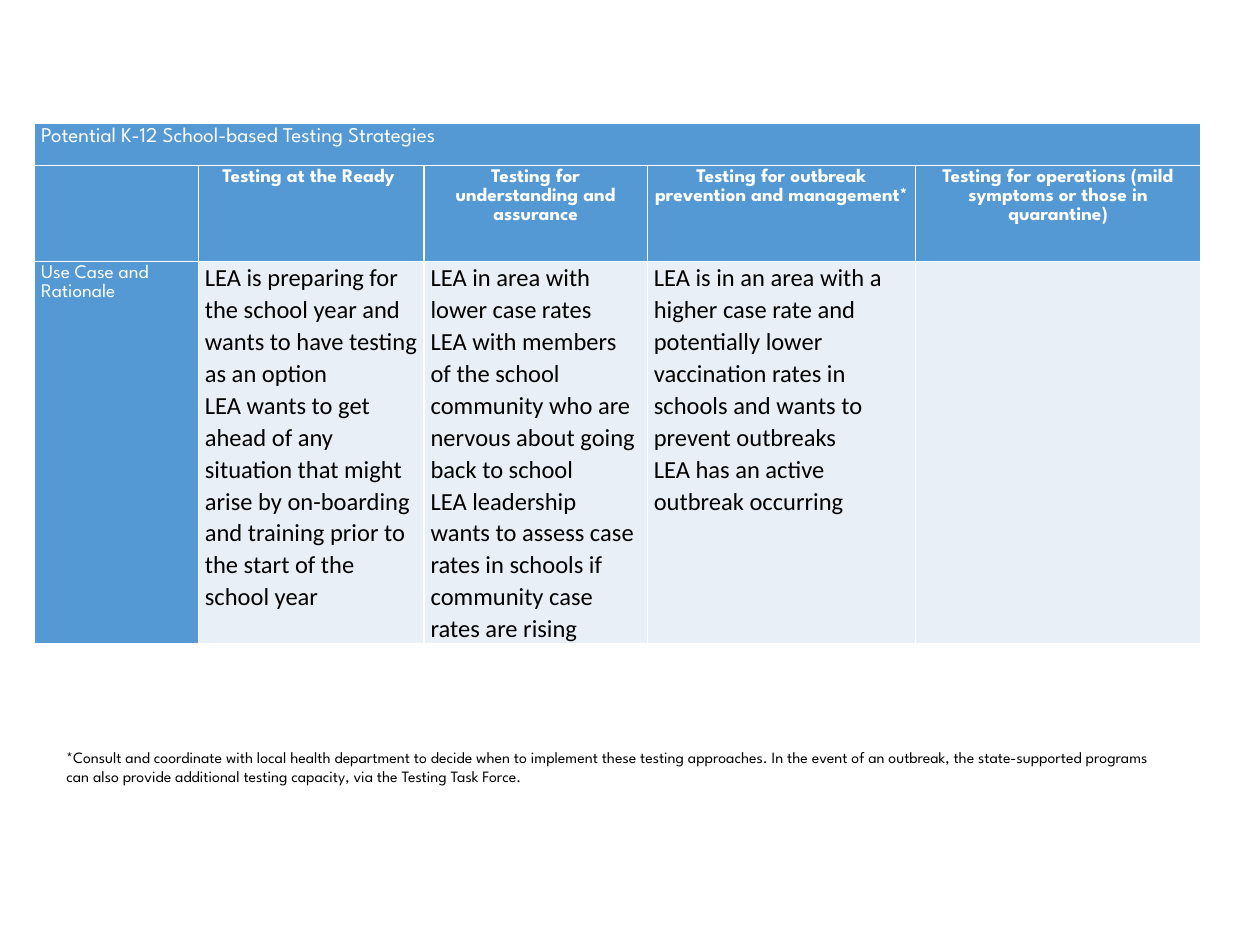
"""Build a slide with a table of school testing strategies and a footnote."""
from dataclasses import dataclass

from lxml import etree
from pptx import Presentation
from pptx.dml.color import RGBColor
from pptx.enum.text import MSO_AUTO_SIZE, PP_ALIGN
from pptx.oxml.ns import qn
from pptx.util import Cm, Pt

LEFT, MID = PP_ALIGN.LEFT, PP_ALIGN.CENTER
GROW = MSO_AUTO_SIZE.SHAPE_TO_FIT_TEXT
BLUE, PALE, WHITE, BLACK = "5499D3", "E9EFF7", "FFFFFF", "000000"
COLS = (3.3, 4.55, 4.5, 5.41, 5.74)
ROWS = (0.85, 1.93, 7.09)


@dataclass(frozen=True)
class Style:
    """Look of a block of text."""
    font: str
    size: int
    color: str
    bold: bool = False
    align: PP_ALIGN = LEFT
    space: float = 1.07
    top: float = 0.05


@dataclass(frozen=True)
class Entry:
    """Content and look of one table cell."""
    lines: tuple[str, ...]
    style: Style
    fill: str = BLUE


TITLE = Style("League Spartan", 12, WHITE)
HEAD = Style("League Spartan", 11, WHITE, True, MID)
SIDE = Style("League Spartan", 11, WHITE)
BODY = Style("Calibri", 14, BLACK, top=0)
NOTE = Style("League Spartan", 9, BLACK, space=1.0)

HEADS = (
    "",
    "Testing at the Ready ",
    "Testing for understanding and assurance",
    "Testing for outbreak prevention and management*",
    "Testing for operations (mild symptoms or those in quarantine)",
)
CASES = (
    ("LEA is preparing for the school year and wants to have testing as an option",
     "LEA wants to get ahead of any situation that might arise by on-boarding "
     "and training prior to the start of the school year"),
    ("LEA in area with lower case rates",
     "LEA with members of the school community who are nervous about going "
     "back to school",
     "LEA leadership wants to assess case rates in schools if community case "
     "rates are rising"),
    ("LEA is in an area with a higher case rate and potentially lower "
     "vaccination rates in schools and wants to prevent outbreaks",
     "LEA has an active outbreak occurring"),
    (),
)
GRID = (
    [Entry(("Potential K-12 School-based Testing Strategies",), TITLE)]
    + [Entry((), TITLE)] * (len(COLS) - 1),
    [Entry((head,) if head else (), HEAD) for head in HEADS],
    [Entry(("Use Case and Rationale",), SIDE)]
    + [Entry(case, BODY, PALE) for case in CASES],
)
FOOT = ("*Consult and coordinate with local health department to decide when to "
        "implement these testing approaches. In the event of an outbreak, the "
        "state-supported programs can also provide additional testing capacity, "
        "via the Testing Task Force.")


def tint(code: str) -> RGBColor:
    """Turn a hex string into a colour."""
    return RGBColor.from_string(code)


def write(frame, lines: tuple[str, ...], style: Style) -> None:
    """Put each line into its own paragraph of the frame."""
    for num, line in enumerate(lines):
        para = frame.add_paragraph() if num else frame.paragraphs[0]
        para.alignment = style.align
        para.line_spacing = style.space
        run = para.add_run()
        run.text = line
        run.font.name = style.font
        run.font.size = Pt(style.size)
        run.font.bold = style.bold
        run.font.color.rgb = tint(style.color)


def edge(cell) -> None:
    """Draw thin white borders round a cell."""
    props = cell._tc.get_or_add_tcPr()
    for side in "LRTB":
        line = etree.SubElement(props, qn(f"a:ln{side}"), w=str(Pt(1)))
        fill = etree.SubElement(line, qn("a:solidFill"))
        etree.SubElement(fill, qn("a:srgbClr"), val=WHITE)


def paint(cell, entry: Entry) -> None:
    """Format a cell and fill in its text."""
    edge(cell)
    cell.fill.solid()
    cell.fill.fore_color.rgb = tint(entry.fill)
    cell.margin_left = cell.margin_right = Cm(0.13)
    cell.margin_top = Cm(entry.style.top)
    cell.margin_bottom = 0
    write(cell.text_frame, entry.lines, entry.style)


def add_grid(slide) -> None:
    """Add the table of strategies."""
    table = slide.shapes.add_table(
        len(ROWS), len(COLS), Cm(0.7), Cm(2.49),
        Cm(sum(COLS)), Cm(sum(ROWS))).table
    table.first_row = table.horz_banding = False
    for col, width in zip(table.columns, COLS):
        col.width = Cm(width)
    for row, height in zip(table.rows, ROWS):
        row.height = Cm(height)
    table.cell(0, 0).merge(table.cell(0, len(COLS) - 1))
    for top, row in enumerate(GRID):
        for left, entry in enumerate(row):
            paint(table.cell(top, left), entry)


def add_note(slide) -> None:
    """Add the footnote below the table."""
    box = slide.shapes.add_textbox(Cm(1.09), Cm(14.95), Cm(22.73), Cm(1.6))
    box.text_frame.word_wrap = True
    box.text_frame.auto_size = GROW
    write(box.text_frame, (FOOT,), NOTE)


def main() -> None:
    """Build and save the slide."""
    deck = Presentation()
    deck.slide_width, deck.slide_height = Cm(25.4), Cm(19.05)
    slide = deck.slides.add_slide(deck.slide_layouts[6])
    add_grid(slide)
    add_note(slide)
    deck.save("out.pptx")


if __name__ == "__main__":
    main()
